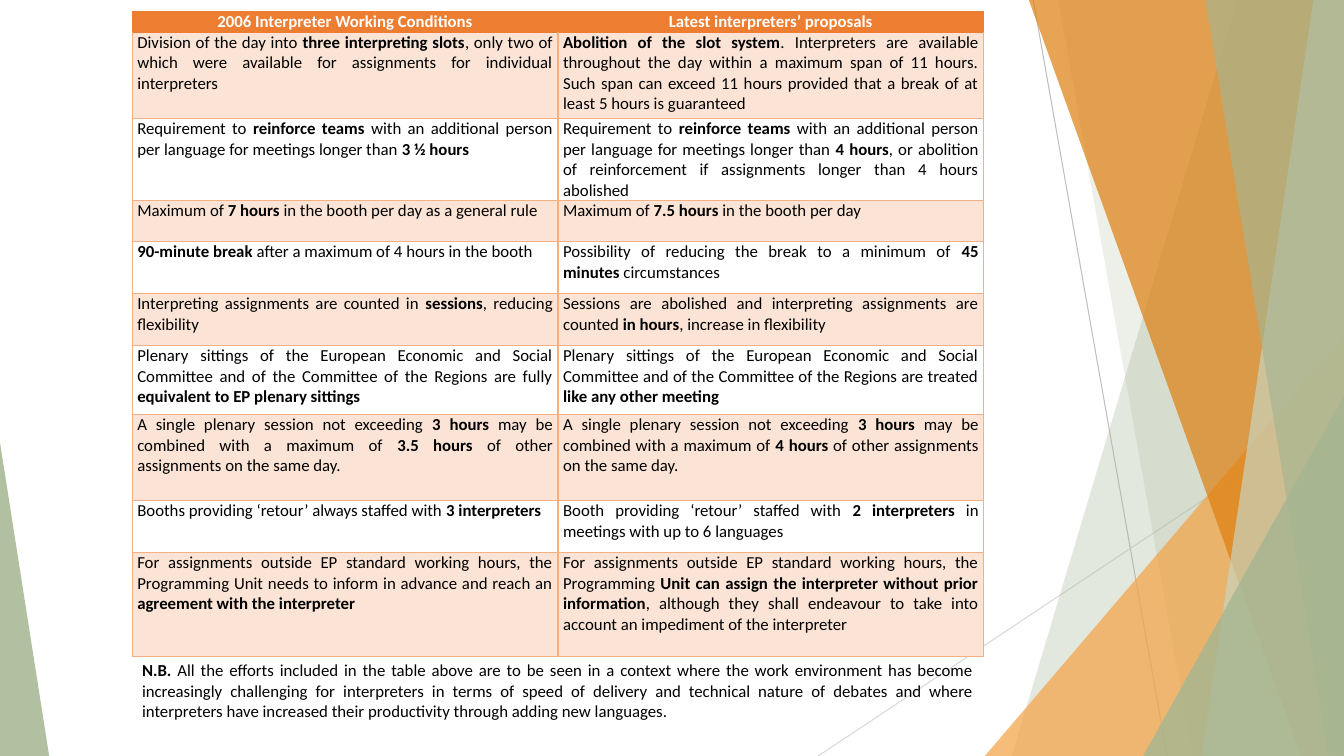
from lxml import etree
from pptx import Presentation
from pptx.dml.color import RGBColor
from pptx.enum.shapes import MSO_CONNECTOR, MSO_SHAPE
from pptx.enum.text import MSO_AUTO_SIZE, PP_ALIGN
from pptx.oxml.ns import qn
from pptx.util import Cm, Pt

LINE, TRIANGLE = MSO_CONNECTOR.STRAIGHT, MSO_SHAPE.ISOSCELES_TRIANGLE
CENTER, JUSTIFY = PP_ALIGN.CENTER, PP_ALIGN.JUSTIFY
GROW = MSO_AUTO_SIZE.SHAPE_TO_FIT_TEXT

BLACK = RGBColor(0x00, 0x00, 0x00)
WHITE = RGBColor(0xFF, 0xFF, 0xFF)
GREY = RGBColor(0xBF, 0xBF, 0xBF)
LIGHT_GREY = RGBColor(0xD9, 0xD9, 0xD9)
SAGE = RGBColor(0xA5, 0xB5, 0x92)
PALE_SAGE = RGBColor(0xC9, 0xD3, 0xBE)
AMBER = RGBColor(0xF3, 0xA4, 0x47)
DARK_AMBER = RGBColor(0xDD, 0x7E, 0x0E)
HEADER = RGBColor(0xED, 0x7D, 0x31)
BORDER = RGBColor(0xF4, 0xB0, 0x83)
BAND = RGBColor(0xFB, 0xE4, 0xD5)

WIDTH, HEIGHT = 33.87, 19.05
LEFT, TABLE_TOP, NOTE_TOP = 3.33, 0.3, 16.51
COLUMN = 10.73
ROW_HEIGHTS = [0.52, 2.17, 2.07, 1.03, 1.31, 1.31, 1.74, 2.17, 1.31, 2.62]

# Bold passages stand between double asterisks.
ROWS = [
    ("**2006 Interpreter Working Conditions**",
     "**Latest interpreters’ proposals**"),
    ("Division of the day into **three interpreting slots**, only two of which were "
     "available for assignments for individual interpreters",
     "**Abolition of the slot system**. Interpreters are available throughout the day "
     "within a maximum span of 11 hours. Such span can exceed 11 hours provided that "
     "a break of at least 5 hours is guaranteed"),
    ("Requirement to **reinforce teams **with an additional person per language for "
     "meetings longer than **3 ½ hours**",
     "Requirement to **reinforce teams **with an additional person per language for "
     "meetings longer than **4 hours**, or abolition of reinforcement if assignments "
     "longer than 4 hours abolished"),
    ("Maximum of **7 hours **in the booth per day as a general rule",
     "Maximum of **7.5 hours **in the booth per day"),
    ("**90-minute break **after a maximum of 4 hours in the booth",
     "Possibility of reducing the break to a minimum of** 45 minutes **circumstances"),
    ("Interpreting assignments are counted in** sessions**, reducing flexibility",
     "Sessions are abolished and interpreting assignments are counted **in hours**, "
     "increase in flexibility"),
    ("Plenary sittings of the European Economic and Social Committee and of the "
     "Committee of the Regions are fully **equivalent to EP plenary sittings**",
     "Plenary sittings of the European Economic and Social Committee and of the "
     "Committee of the Regions are treated **like any other meeting**"),
    ("A single plenary session not exceeding **3 hours **may be combined with a maximum "
     "of **3.5 hours **of other assignments on the same day.",
     "A single plenary session not exceeding **3 hours **may be combined with a maximum "
     "of **4 hours **of other assignments on the same day."),
    ("Booths providing ‘retour’ always staffed with **3 interpreters**",
     "Booth providing ‘retour’ staffed with **2 interpreters **in meetings with up to "
     "6 languages"),
    ("For assignments outside EP standard working hours, the Programming Unit needs to "
     "inform in advance and reach an **agreement with the interpreter**",
     "For assignments outside EP standard working hours, the Programming **Unit can "
     "assign the interpreter without prior information**, although they shall endeavour "
     "to take into account an impediment of the interpreter"),
]
NOTE = ("**N.B. **All the efforts included in the table above are to be seen in a context "
        "where the work environment has become increasingly challenging for interpreters "
        "in terms of speed of delivery and technical nature of debates and where "
        "interpreters have increased their productivity through adding new languages.")


class Deck:
    font = {"name": "Calibri", "size": Pt(12)}
    cell_margins = {"margin_left": Cm(0.13), "margin_right": Cm(0.13),
                    "margin_top": 0, "margin_bottom": 0}

    def __init__(self):
        self.prs = Presentation()
        self.prs.slide_width, self.prs.slide_height = Cm(WIDTH), Cm(HEIGHT)
        self.s = self.prs.slides.add_slide(self.prs.slide_layouts[6])

    def line(self, x1, y1, x2, y2, color):
        c = self.s.shapes.add_connector(LINE, Cm(x1), Cm(y1), Cm(x2), Cm(y2))
        c.line.color.rgb, c.line.width = color, Pt(0.75)
        etree.SubElement(c._element.spPr, qn("a:effectLst"))

    def paint(self, sp, color, opacity):
        """Give a shape a translucent fill, no outline and no shadow."""
        sp.shadow.inherit = False
        sp.line.fill.background()
        sp.fill.solid()
        sp.fill.fore_color.rgb = color
        clr = sp._element.spPr.find(qn("a:solidFill"))[0]
        etree.SubElement(clr, qn("a:alpha"), val=str(opacity * 1000))

    def band(self, top_x, bottom_x, color, opacity):
        """Fill from a slanted edge to the right side of the slide."""
        fb = self.s.shapes.build_freeform(Cm(top_x), 0)
        fb.add_line_segments([(Cm(WIDTH), 0), (Cm(WIDTH), Cm(HEIGHT)),
                              (Cm(bottom_x), Cm(HEIGHT))])
        self.paint(fb.convert_to_shape(), color, opacity)

    def triangle(self, x, y, w, apex, color, opacity):
        """Draw a triangle that stands on the bottom of the slide."""
        sp = self.s.shapes.add_shape(TRIANGLE, Cm(x), Cm(y), Cm(w), Cm(HEIGHT - y))
        sp.adjustments[0] = apex
        self.paint(sp, color, opacity)

    def rich_text(self, tf, text, color=BLACK, align=JUSTIFY):
        p = tf.paragraphs[0]
        p.alignment = align
        for i, part in enumerate(text.split("**")):
            if part:
                r = p.add_run()
                r.text = part
                r.font.color.rgb = color
                for key, value in {**self.font, "bold": i % 2 == 1}.items():
                    setattr(r.font, key, value)

    def borders(self, cell, color, top_color):
        tc_pr = cell._tc.get_or_add_tcPr()
        for side in "LRTB":
            ln = etree.SubElement(tc_pr, qn(f"a:ln{side}"), w=str(Pt(1)))
            fill = etree.SubElement(ln, qn("a:solidFill"))
            etree.SubElement(fill, qn("a:srgbClr"),
                             val=str(top_color if side == "T" else color))

    def table(self, x, y, rows, heights, column):
        t = self.s.shapes.add_table(len(rows), len(rows[0]), Cm(x), Cm(y),
                                    Cm(column * len(rows[0])), Cm(sum(heights))).table
        t.first_row = t.horz_banding = False
        for col in t.columns:
            col.width = Cm(column)
        for i, (texts, height) in enumerate(zip(rows, heights)):
            t.rows[i].height = Cm(height)
            for j, text in enumerate(texts):
                cell = t.cell(i, j)
                for key, value in self.cell_margins.items():
                    setattr(cell, key, value)
                self.borders(cell, BORDER if i else HEADER, BORDER if i > 1 else HEADER)
                if i and i % 2 == 0:
                    cell.fill.background()
                else:
                    cell.fill.solid()
                    cell.fill.fore_color.rgb = BAND if i else HEADER
                if i:
                    self.rich_text(cell.text_frame, text)
                else:
                    self.rich_text(cell.text_frame, text, WHITE, CENTER)

    def note(self, x, y, w, h, text):
        tf = self.s.shapes.add_textbox(Cm(x), Cm(y), Cm(w), Cm(h)).text_frame
        tf.word_wrap, tf.auto_size = True, GROW
        self.rich_text(tf, text)


def main():
    d = Deck()
    d.line(26.04, 0, 29.41, HEIGHT, GREY)
    d.line(WIDTH, 10.24, 20.62, HEIGHT, LIGHT_GREY)
    d.band(31.19, 25.5, SAGE, 30)
    d.band(26.67, 30.05, SAGE, 20)
    d.triangle(24.82, 8.46, 9.05, 1, AMBER, 72)
    d.band(25.93, 32.79, DARK_AMBER, 70)
    d.band(33.1, 30.28, PALE_SAGE, 70)
    d.band(30.38, 33.48, SAGE, 65)
    d.triangle(28.81, 9.98, 5.06, 1, SAGE, 80)
    d.triangle(0, 11.15, 1.24, 0, SAGE, 85)
    d.table(LEFT, TABLE_TOP, ROWS, ROW_HEIGHTS, COLUMN)
    d.note(LEFT, NOTE_TOP, 2 * COLUMN, 1.8, NOTE)
    d.prs.save("out.pptx")


if __name__ == "__main__":
    main()
